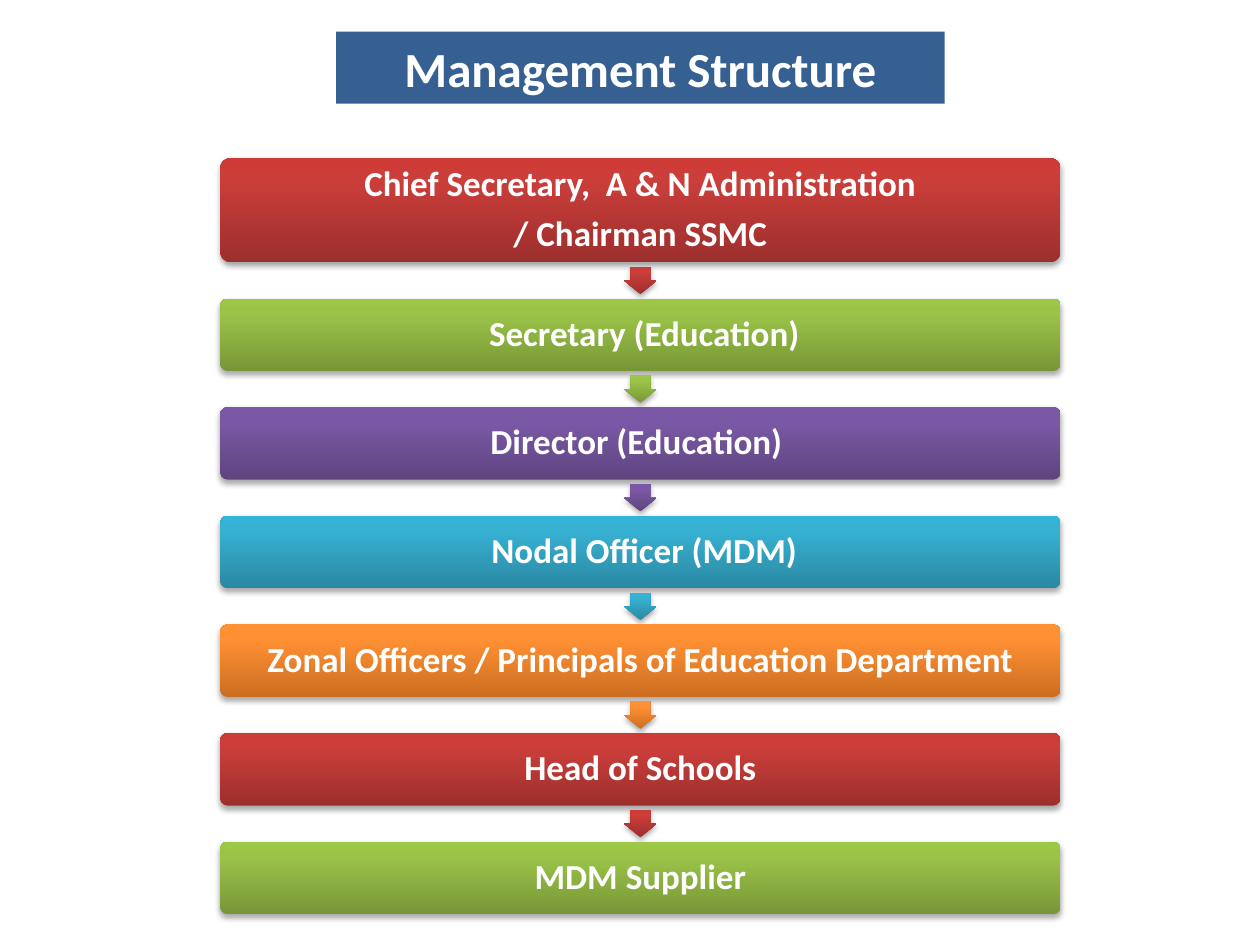
from lxml import etree
from pptx import Presentation
from pptx.dml.color import RGBColor
from pptx.enum.shapes import MSO_SHAPE
from pptx.enum.text import MSO_ANCHOR, PP_ALIGN
from pptx.oxml import parse_xml
from pptx.oxml.ns import nsdecls, qn
from pptx.util import Cm, Pt

RECTANGLE = MSO_SHAPE.RECTANGLE
ROUNDED = MSO_SHAPE.ROUNDED_RECTANGLE
DOWN_ARROW = MSO_SHAPE.DOWN_ARROW
MIDDLE = MSO_ANCHOR.MIDDLE
CENTER = PP_ALIGN.CENTER

# Content, from the top of the hierarchy down
TITLE = "Management Structure"
LEVELS = [
    "Chief Secretary,  A & N Administration\n/ Chairman SSMC",
    " Secretary (Education)",
    "Director (Education) ",
    " Nodal Officer (MDM)",
    "Zonal Officers / Principals of Education Department",
    "Head of Schools",
    "MDM Supplier",
]

FONT = "Calibri"
COLORS = {"title": "376092", "text": "FFFFFF", "shadow": "000000"}
# Gradient stops from bottom to top, repeated down the levels
STOPS = (0, 80, 100)
GRADIENTS = [
    ("9C2F2D", "CB3E3A", "CE3B37"),
    ("779737", "9BC348", "9DC746"),
    ("5F4480", "7B58A6", "7C57A8"),
    ("2A88A2", "37B1D2", "34B4D6"),
    ("CC6E20", "FF9034", "FF9136"),
]

# Layout in centimetres
CENTER_X = 12.91
TITLE_TOP, TITLE_WIDTH, TITLE_HEIGHT = 0.64, 12.27, 1.45
FIRST_TOP, BOX_WIDTH = 3.19, 16.94
ONE_LINE, TWO_LINES, GAP = 1.46, 2.1, 0.73
ARROW_WIDTH, ARROW_HEIGHT = 0.66, 0.55
INSET = 0.25


def add_centered(slide, kind, top, width, height):
    shape = slide.shapes.add_shape(
        kind, Cm(CENTER_X - width / 2), Cm(top), Cm(width), Cm(height))
    shape.shadow.inherit = False
    shape.line.fill.background()
    return shape


def set_text(shape, text, size):
    frame = shape.text_frame
    frame.word_wrap = True
    frame.vertical_anchor = MIDDLE
    frame.text = text
    for para in frame.paragraphs:
        para.alignment = CENTER
        for span in para.runs:
            span.font.name = FONT
            span.font.size = Pt(size)
            span.font.bold = True
            span.font.color.rgb = RGBColor.from_string(COLORS["text"])


def style_raised(shape, gradient):
    """Give the shape a vertical gradient and a soft shadow below."""
    properties = shape.element.spPr
    stops = "".join(
        f'<a:gs pos="{stop * 1000}"><a:srgbClr val="{color}"/></a:gs>'
        for stop, color in zip(STOPS, gradient))
    fill = parse_xml(
        f'<a:gradFill {nsdecls("a")} rotWithShape="1"><a:gsLst>{stops}</a:gsLst>'
        '<a:lin ang="16200000" scaled="0"/></a:gradFill>')
    properties.find(qn("a:ln")).addprevious(fill)
    effects = properties.find(qn("a:effectLst"))
    shadow = etree.SubElement(
        effects, qn("a:outerShdw"), blurRad=str(Pt(3.1)), dist=str(Pt(1.8)),
        dir="5400000", rotWithShape="0")
    color = etree.SubElement(shadow, qn("a:srgbClr"), val=COLORS["shadow"])
    etree.SubElement(color, qn("a:alpha"), val="35000")


def add_level(slide, text, top, height, gradient):
    box = add_centered(slide, ROUNDED, top, BOX_WIDTH, height)
    box.adjustments[0] = 0.1
    style_raised(box, gradient)
    set_text(box, text, 20)
    frame = box.text_frame
    frame.margin_left = frame.margin_right = Cm(INSET)
    frame.margin_top = frame.margin_bottom = Cm(INSET)
    for para in frame.paragraphs:
        para.line_spacing = 0.9
        para.space_after = Pt(7)


def main():
    deck = Presentation()
    deck.slide_width, deck.slide_height = Cm(25.4), Cm(19.05)
    page = deck.slides.add_slide(deck.slide_layouts[6])

    # Chain of levels, with an arrow in each gap
    top = FIRST_TOP
    for index, text in enumerate(LEVELS):
        gradient = GRADIENTS[index % len(GRADIENTS)]
        height = TWO_LINES if "\n" in text else ONE_LINE
        add_level(page, text, top, height, gradient)
        top += height
        if index < len(LEVELS) - 1:
            arrow = add_centered(page, DOWN_ARROW, top + (GAP - ARROW_HEIGHT) / 2,
                                 ARROW_WIDTH, ARROW_HEIGHT)
            arrow.adjustments[0] = 0.6
            arrow.adjustments[1] = 0.5
            style_raised(arrow, gradient)
        top += GAP

    # Title bar
    title = add_centered(page, RECTANGLE, TITLE_TOP, TITLE_WIDTH, TITLE_HEIGHT)
    title.fill.solid()
    title.fill.fore_color.rgb = RGBColor.from_string(COLORS["title"])
    set_text(title, TITLE, 28)

    deck.save("out.pptx")


if __name__ == "__main__":
    main()
